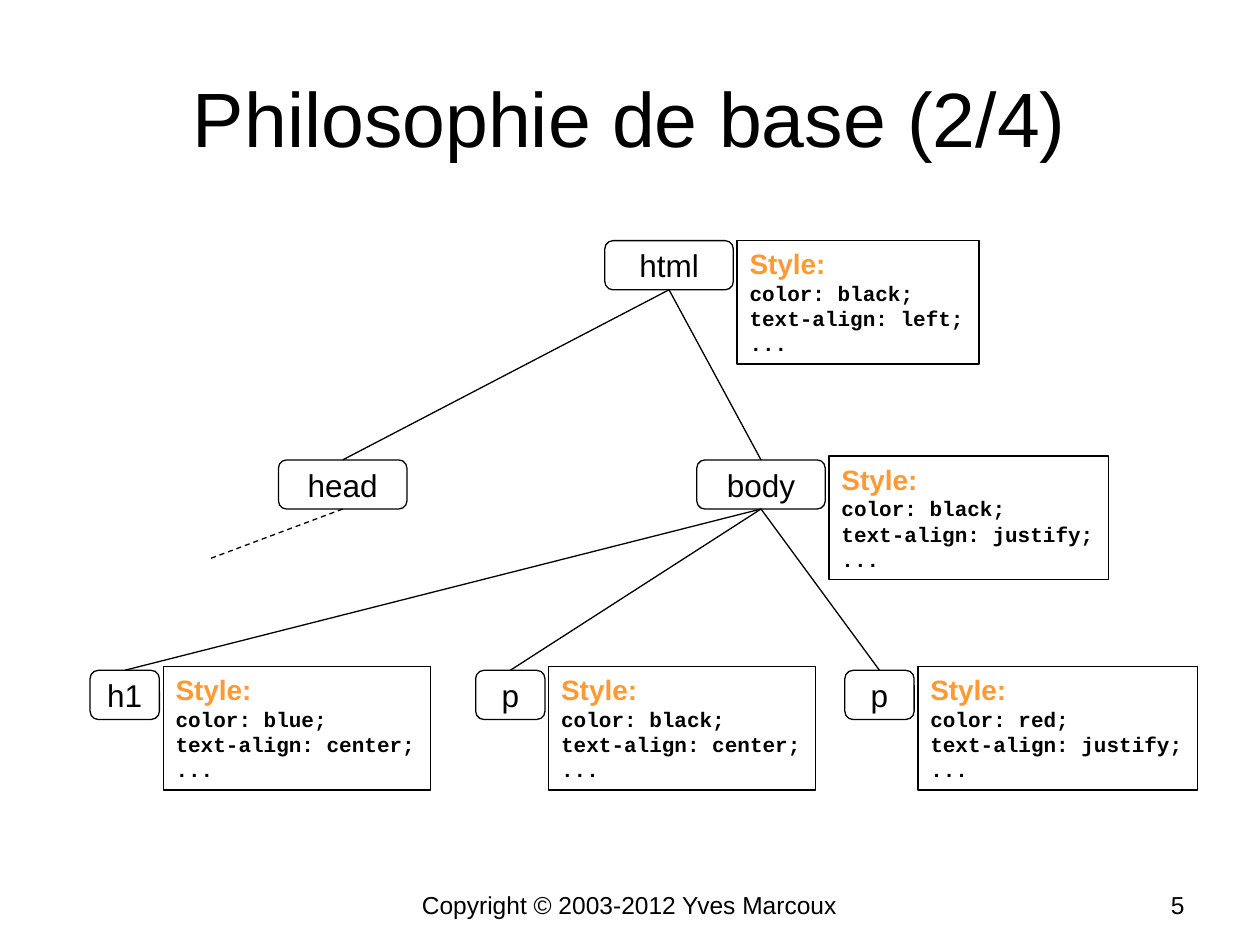
from pptx import Presentation
from pptx.dml.color import RGBColor
from pptx.enum.dml import MSO_LINE
from pptx.enum.shapes import MSO_CONNECTOR, MSO_SHAPE
from pptx.enum.text import MSO_ANCHOR, MSO_AUTO_SIZE, PP_ALIGN
from pptx.oxml.ns import qn
from pptx.util import Inches, Pt

# Content
TITLE = "Philosophie de base (2/4)"
FOOTER = "Copyright © 2003-2012 Yves Marcoux"
NUMBER = "5"
# key: label, parent, tree row, centre x, (color, text-align)
NODES = {
    "html": ("html", None, 0, 5.31, ("black", "left")),
    "head": ("head", "html", 1, 2.72, None),
    "body": ("body", "html", 1, 6.04, ("black", "justify")),
    "h1": ("h1", "body", 2, 0.99, ("blue", "center")),
    "p1": ("p", "body", 2, 4.05, ("black", "center")),
    "p2": ("p", "body", 2, 6.98, ("red", "justify")),
}

# Theme: colours, fonts and type sizes
THEME = {
    "ink": RGBColor(0, 0, 0), "accent": RGBColor(0xFF, 0x99, 0x33),
    "sans": "Arial", "mono": "Courier New",
    "title": 44, "node": 18, "head": 16, "code": 12, "foot": 14, "line": 0.75,
}

# Grid, in inches; one entry per tree row
TOPS = (1.91, 3.65, 5.32)
WIDTHS = (1.02, 1.02, 0.55)
LIFTS = (0, 0.03, 0.03)
TALL, GAP, CARD = 0.39, 0.03, 0.98
CHAR, PAD = 0.1, 0.22
STUB = (1.07, 0.4)

deck = Presentation()
deck.slide_width, deck.slide_height = Inches(10), Inches(7.5)
slide = deck.slides.add_slide(deck.slide_layouts[6])
shapes = slide.shapes


def style(para, size, align, font="sans", color="ink", bold=False):
    para.alignment = align
    for run in para.runs:
        face = run.font
        face.name, face.size, face.bold = THEME[font], Pt(THEME[size]), bold
        face.color.rgb = THEME[color]


def label(text, box, size, align, anchor):
    frame = shapes.add_textbox(*map(Inches, box)).text_frame
    frame.word_wrap, frame.vertical_anchor = True, anchor
    frame.text = text
    style(frame.paragraphs[0], size, align)


def outline(kind, box):
    shape = shapes.add_shape(kind, *map(Inches, box))
    shape.shadow.inherit = False
    shape.fill.background()
    shape.line.color.rgb, shape.line.width = THEME["ink"], Pt(THEME["line"])
    shape.text_frame.word_wrap = False
    shape.text_frame.vertical_anchor = MSO_ANCHOR.MIDDLE
    return shape.text_frame


def link(start, end, dash=None):
    wire = shapes.add_connector(MSO_CONNECTOR.STRAIGHT, *map(Inches, start + end))
    wire.line.color.rgb, wire.line.width = THEME["ink"], Pt(THEME["line"])
    wire.line.dash_style = dash
    props = wire._element.spPr
    props.append(props.makeelement(qn("a:effectLst"), {}))


def card(left, top, rules):
    lines = [f"color: {rules[0]};", f"text-align: {rules[1]};", "..."]
    wide = PAD + CHAR * max(map(len, lines))
    frame = outline(MSO_SHAPE.RECTANGLE, (left, top, wide, CARD))
    frame.vertical_anchor = MSO_ANCHOR.TOP
    frame.auto_size = MSO_AUTO_SIZE.SHAPE_TO_FIT_TEXT
    frame.text = "\n".join(["Style:"] + lines)
    first, *rest = frame.paragraphs
    style(first, "head", PP_ALIGN.LEFT, color="accent", bold=True)
    for para in rest:
        style(para, "code", PP_ALIGN.LEFT, font="mono", bold=True)


# Title and footer
label(TITLE, (0.5, 0.3, 9, 1.25), "title", PP_ALIGN.CENTER, MSO_ANCHOR.MIDDLE)
label(FOOTER, (2.87, 6.83, 4.25, 0.52), "foot", PP_ALIGN.CENTER, MSO_ANCHOR.BOTTOM)
label(NUMBER, (7.17, 6.83, 2.33, 0.52), "foot", PP_ALIGN.RIGHT, MSO_ANCHOR.BOTTOM)

# Tree: nodes, links to parents, style cards
for text, parent, row, mid, rules in NODES.values():
    top, wide = TOPS[row], WIDTHS[row]
    frame = outline(MSO_SHAPE.FLOWCHART_ALTERNATE_PROCESS,
                    (mid - wide / 2, top, wide, TALL))
    frame.text = text
    style(frame.paragraphs[0], "node", PP_ALIGN.CENTER)
    if parent:
        _, _, above, x, _ = NODES[parent]
        link((x, TOPS[above] + TALL), (mid, top))
    if rules:
        card(mid + wide / 2 + GAP, top - LIFTS[row], rules)

# Dashed stub for the children of head
_, _, row, x, _ = NODES["head"]
y = TOPS[row] + TALL
link((x, y), (x - STUB[0], y + STUB[1]), MSO_LINE.DASH)

deck.save("out.pptx")
